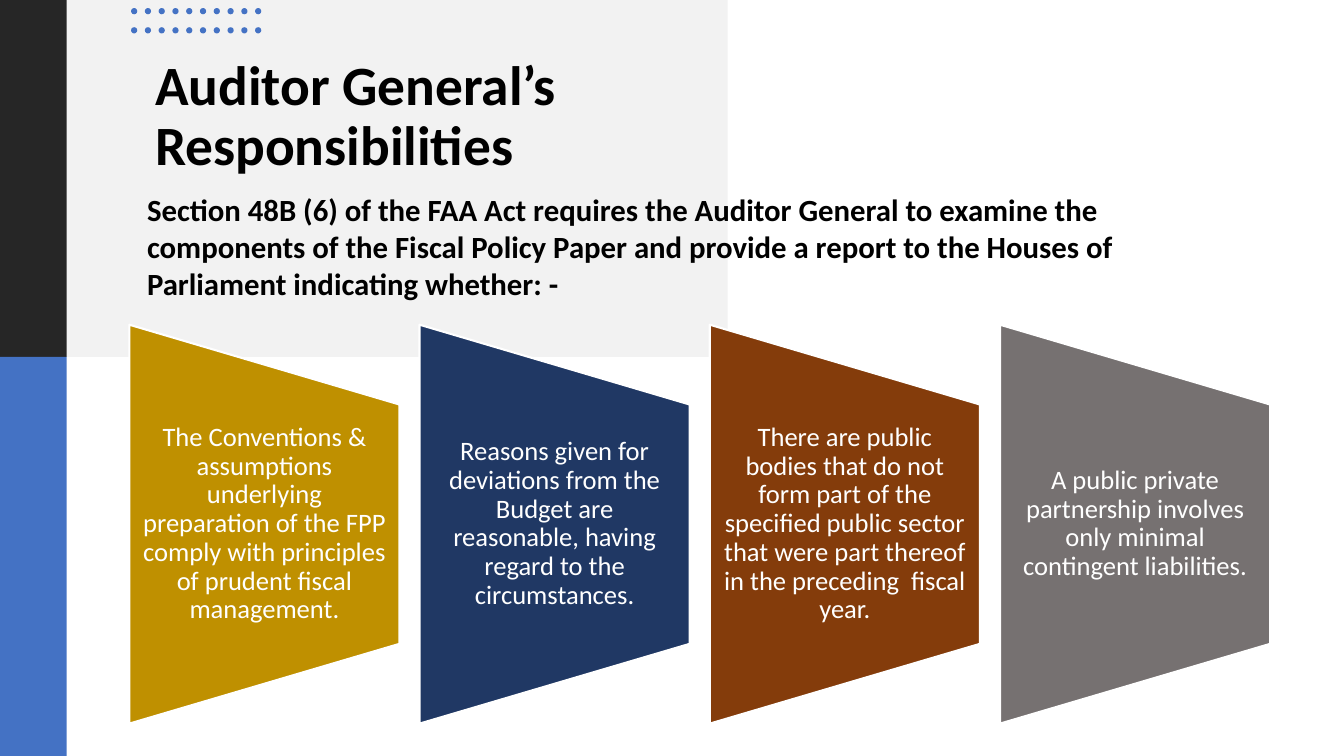
from itertools import product

from pptx import Presentation
from pptx import util as u
from pptx.dml.color import RGBColor
from pptx.enum import shapes, text

COLORS = {
    "panel": "F2F2F2", "charcoal": "262626", "blue": "4472C4",
    "black": "000000", "white": "FFFFFF", "gold": "BF9000",
    "navy": "203864", "rust": "843C0B", "gray": "767171",
}
HEADING = {"size": u.Pt(39.6), "bold": True}
INTRO = {"size": u.Pt(22), "bold": True}
CARD = {"size": u.Pt(19), "bold": False}

RESPONSIBILITIES = [
    ("gold", "The Conventions & assumptions underlying preparation of the FPP "
             "comply with principles of prudent fiscal management."),
    ("navy", "Reasons given for deviations from the Budget are reasonable, "
             "having regard to the circumstances."),
    ("rust", "There are public bodies that do not form part of the specified "
             "public sector that were part thereof in the preceding  fiscal year."),
    ("gray", "A public private partnership involves only minimal contingent liabilities."),
]


class SlideBuilder:
    """Places elements on a grid of 160 columns by 90 rows."""
    COLUMNS, ROWS = 160, 90
    FONT = "Calibri"

    def __init__(self, presentation):
        self.slide = presentation.slides.add_slide(presentation.slide_layouts[6])
        self.column = presentation.slide_width / self.COLUMNS
        self.row = presentation.slide_height / self.ROWS

    def place(self, left, top, width, height):
        return [round(length) for length in (left * self.column, top * self.row,
                                             width * self.column, height * self.row)]

    def shape(self, kind, color, left, top, width, height, outline=None):
        shape = self.slide.shapes.add_shape(kind, *self.place(left, top, width, height))
        shape.shadow.inherit = False
        shape.fill.solid()
        shape.fill.fore_color.rgb = RGBColor.from_string(COLORS[color])
        if outline:
            shape.line.color.rgb = RGBColor.from_string(COLORS[outline])
            shape.line.width = u.Pt(1.5)
        else:
            shape.line.fill.background()
        return shape

    def trapezoid(self, color, left, top, width, height):
        # A quarter turn swaps width and height around the same centre
        shape = self.shape(shapes.MSO_SHAPE.FLOWCHART_MANUAL_OPERATION, color,
                           left + (width - height) / 2, top + (height - width) / 2,
                           height, width, outline="white")
        shape.rotation = 270

    def text(self, content, style, color, left, top, width, height, spacing=1.0,
             anchor=text.MSO_ANCHOR.TOP, align=text.PP_ALIGN.LEFT, side=0.1, inset=0):
        box = self.slide.shapes.add_textbox(*self.place(left, top, width, height))
        frame = box.text_frame
        frame_format = {
            "word_wrap": True, "vertical_anchor": anchor,
            "margin_left": u.Inches(side), "margin_right": u.Inches(side),
            "margin_top": u.Inches(inset), "margin_bottom": u.Inches(inset),
        }
        for name, value in frame_format.items():
            setattr(frame, name, value)
        paragraph = frame.paragraphs[0]
        paragraph.alignment = align
        paragraph.line_spacing = spacing
        run = paragraph.add_run()
        run.text = content
        for name, value in {"name": self.FONT, **style}.items():
            setattr(run.font, name, value)
        run.font.color.rgb = RGBColor.from_string(COLORS[color])


def main():
    presentation = Presentation()
    presentation.slide_width, presentation.slide_height = u.Inches(13.33), u.Inches(7.5)
    builder = SlideBuilder(presentation)
    rectangle, oval = shapes.MSO_SHAPE.RECTANGLE, shapes.MSO_SHAPE.OVAL

    # Background panel and sidebar
    split = 42.5
    builder.shape(rectangle, "panel", 0, 0, 86.64, split)
    builder.shape(rectangle, "charcoal", 0, 0, 7.95, split)
    builder.shape(rectangle, "blue", 0, split, 7.95, builder.ROWS - split)

    # Dot pattern
    for row, column in product(range(2), range(10)):
        builder.shape(oval, "blue", 15.6 + 1.64 * column, 0.96 + 2.28 * row, 0.74, 0.74)

    # Title and introduction
    builder.text("Auditor General’s Responsibilities", HEADING, "black",
                 17.28, 6.9, 66.5, 22, spacing=0.9)
    builder.text("Section 48B (6) of the FAA Act requires the Auditor General to examine "
                 "the components of the Fiscal Policy Paper and provide a report to the "
                 "Houses of Parliament indicating whether: -", INTRO, "black",
                 16.32, 22.1, 124.8, 14.5, inset=0.05)

    # Responsibility cards
    for index, (color, content) in enumerate(RESPONSIBILITIES):
        left = 15.4 + 34.55 * index
        builder.trapezoid(color, left, 38.65, 32.15, 47.5)
        builder.text(content, CARD, "white", left, 48.1, 32.15, 28.55, spacing=0.9,
                     anchor=text.MSO_ANCHOR.MIDDLE, align=text.PP_ALIGN.CENTER, side=0.13)

    presentation.save("out.pptx")


if __name__ == "__main__":
    main()
